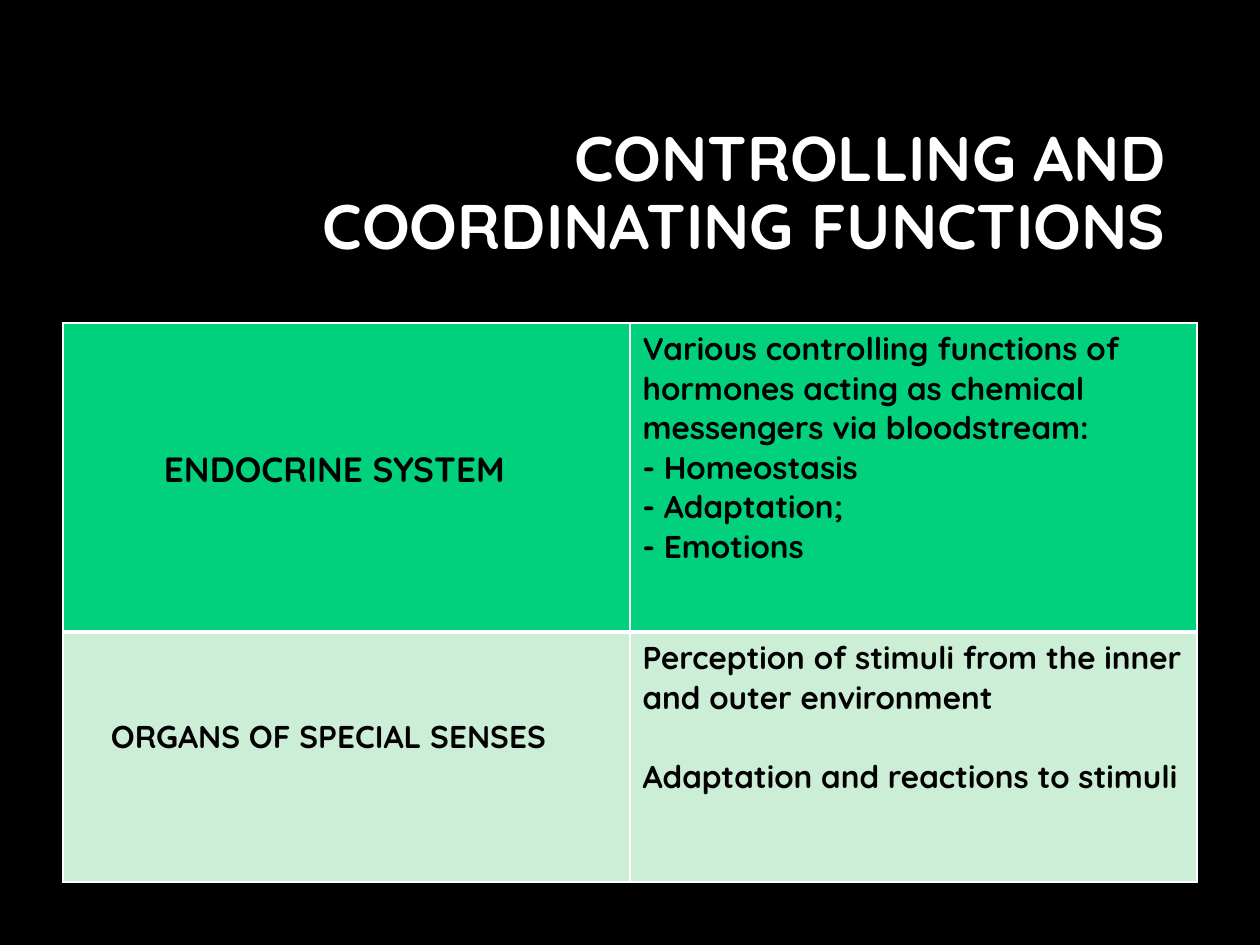
from lxml.etree import SubElement
from pptx import Presentation
from pptx.dml.color import RGBColor
from pptx.enum.text import MSO_ANCHOR as Anchor, MSO_AUTO_SIZE as AutoSize, PP_ALIGN as Align
from pptx.oxml.ns import qn
from pptx.util import Emu, Pt

PX = 914400 // 126
BLACK = RGBColor(0x00, 0x00, 0x00)
WHITE = RGBColor(0xFF, 0xFF, 0xFF)
GREEN = RGBColor(0x01, 0xD1, 0x7D)
MINT = RGBColor(0xCC, 0xEE, 0xD7)
FONT = "Quicksand"

TITLE = "CONTROLLING AND COORDINATING FUNCTIONS"
COLUMN_WIDTH = 567
SYSTEMS = [
    {
        "height": 309, "fill": GREEN, "lines": {"T": 1, "B": 3},
        "name": "ENDOCRINE SYSTEM", "size": 20, "left": 101, "top": 124,
        "functions": [
            "Various controlling functions of hormones acting as chemical "
            "messengers via bloodstream:",
            "- Homeostasis",
            "- Adaptation;",
            "- Emotions",
        ],
        "gap": 0,
    },
    {
        "height": 250, "fill": MINT, "lines": {"T": 3, "B": 1},
        "name": "ORGANS OF SPECIAL SENSES", "size": 18, "left": 48, "top": 85,
        "functions": [
            "Perception of stimuli from the inner and outer environment",
            "Adaptation and reactions to stimuli",
        ],
        "gap": 22.5,
    },
]


def px(*lengths):
    """Turn pixel lengths into EMU."""
    return [Emu(length * PX) for length in lengths]


def set_all(target, values):
    """Set every attribute named in a dict of format values."""
    for name, value in values.items():
        setattr(target, name, value)


def write(frame, texts, size, color, gap=0, **para_format):
    """Write bold paragraphs with a gap in points between them."""
    for index, text in enumerate(texts):
        para = frame.add_paragraph() if index else frame.paragraphs[0]
        set_all(para, {"space_before": Pt(gap if index else 0), **para_format})
        span = para.add_run()
        span.text = text
        set_all(span.font, {"name": FONT, "size": Pt(size), "bold": True})
        span.font.color.rgb = color


def draw_borders(cell, widths):
    """Draw white cell borders with widths in points by side."""
    props = cell._tc.get_or_add_tcPr()
    for index, side in enumerate("LRTB"):
        line = SubElement(props, qn(f"a:ln{side}"), w=str(Pt(widths.get(side, 1))))
        fill = SubElement(line, qn("a:solidFill"))
        SubElement(fill, qn("a:srgbClr"), val=str(WHITE))
        props.insert(index, line)


def add_title(page, left, top, width, height):
    """Place the right-aligned heading in the title placeholder."""
    title = page.shapes.title
    set_all(title, dict(zip(("left", "top", "width", "height"),
                            px(left, top, width, height))))
    set_all(title.text_frame, {"word_wrap": True, "auto_size": AutoSize.NONE,
                               "vertical_anchor": Anchor.MIDDLE})
    write(title.text_frame, [TITLE], 36, WHITE,
          alignment=Align.RIGHT, line_spacing=0.9)


def add_systems_table(page, left, top):
    """Place the table of systems and their functions."""
    height = sum(system["height"] for system in SYSTEMS)
    box = px(left, top, 2 * COLUMN_WIDTH, height)
    table = page.shapes.add_table(len(SYSTEMS), 2, *box).table
    set_all(table, {"first_row": False, "horz_banding": False})
    for column in table.columns:
        column.width = Emu(COLUMN_WIDTH * PX)
    for row, system in zip(table.rows, SYSTEMS):
        row.height = Emu(system["height"] * PX)
        name, functions = row.cells
        for cell in row.cells:
            cell.fill.solid()
            cell.fill.fore_color.rgb = system["fill"]
            draw_borders(cell, system["lines"])
        set_all(name, dict(zip(("margin_left", "margin_top"),
                               px(system["left"], system["top"]))))
        write(name.text_frame, [system["name"]], system["size"], BLACK)
        write(functions.text_frame, system["functions"], 18, BLACK, system["gap"])


def main():
    """Build and save the slide."""
    deck = Presentation()
    deck.slide_width, deck.slide_height = px(1260, 945)
    page = deck.slides.add_slide(deck.slide_layouts[5])
    page.background.fill.solid()
    page.background.fill.fore_color.rgb = BLACK
    add_title(page, 300, 106, 878, 178)
    add_systems_table(page, 63, 323)
    deck.save("out.pptx")


if __name__ == "__main__":
    main()
